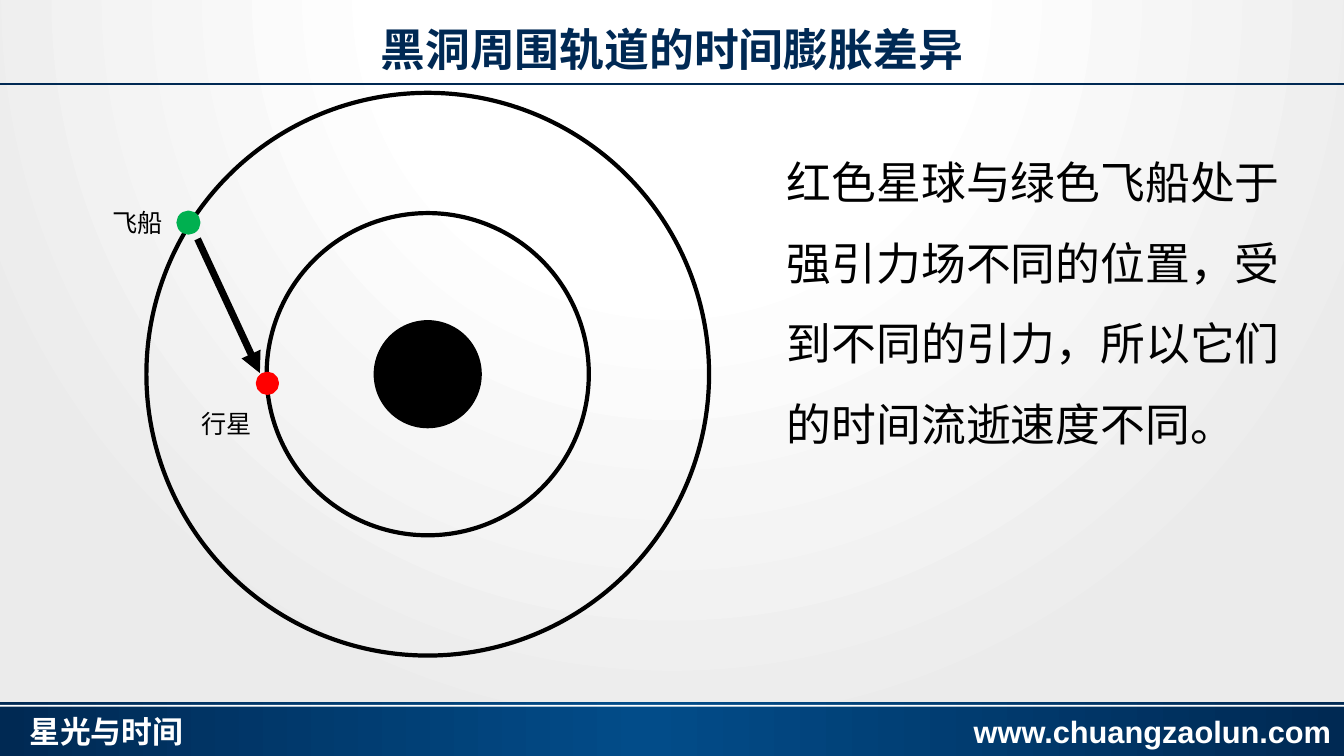
from lxml.etree import SubElement
from pptx import Presentation
from pptx.dml.color import RGBColor
from pptx.enum.shapes import MSO_CONNECTOR, MSO_SHAPE
from pptx.enum.text import MSO_ANCHOR, MSO_AUTO_SIZE, PP_ALIGN
from pptx.oxml import parse_xml
from pptx.oxml.ns import nsdecls, qn
from pptx.util import Cm, Pt

NAVY = RGBColor(0x00, 0x29, 0x53)
TITLE_NAVY = RGBColor(0x00, 0x29, 0x54)
BLUE = RGBColor(0x02, 0x4C, 0x89)
WHITE = RGBColor(0xFF, 0xFF, 0xFF)
PALE_GREY = RGBColor(0xEB, 0xEB, 0xEB)
BLACK = RGBColor(0x00, 0x00, 0x00)
RED = RGBColor(0xFF, 0x00, 0x00)
GREEN = RGBColor(0x00, 0xB0, 0x50)
CHINESE_FONT = "Noto Sans CJK SC"
SLIDE_WIDTH, SLIDE_HEIGHT = 33.87, 19.05


def gradient_fill(stops, direction):
    stop_xml = "".join(
        f'<a:gs pos="{position * 1000}"><a:srgbClr val="{color}"/></a:gs>'
        for position, color in stops
    )
    return parse_xml(
        f'<a:gradFill {nsdecls("a")} rotWithShape="1">'
        f"<a:gsLst>{stop_xml}</a:gsLst>{direction}</a:gradFill>"
    )


def format_text(shape, text, size, color, font_name, bold=False, spacing=1.0):
    text_frame = shape.text_frame
    text_frame.text = text
    paragraph = text_frame.paragraphs[0]
    paragraph.line_spacing = spacing
    run = paragraph.runs[0]
    run.font.size = Pt(size)
    run.font.bold = bold
    run.font.name = font_name
    run.font.color.rgb = color
    properties = run.font._element
    properties.set("lang", "zh-CN")
    SubElement(properties, qn("a:ea")).set("typeface", CHINESE_FONT)
    return paragraph


def add_text(slide, left, top, width, height, text, size, color, font_name, **style):
    shape = slide.shapes.add_textbox(Cm(left), Cm(top), Cm(width), Cm(height))
    format_text(shape, text, size, color, font_name, **style)
    shape.text_frame.word_wrap = True
    return shape


def add_line(slide, start, end, color, width):
    connector = slide.shapes.add_connector(
        MSO_CONNECTOR.STRAIGHT, *(Cm(value) for value in (*start, *end))
    )
    connector.line.color.rgb = color
    connector.line.width = Pt(width)
    SubElement(connector._element.spPr, qn("a:effectLst"))
    return connector


def add_bar(slide, left, top, width, height, color):
    bar = slide.shapes.add_shape(
        MSO_SHAPE.RECTANGLE, Cm(left), Cm(top), Cm(width), Cm(height)
    )
    bar.shadow.inherit = False
    bar.fill.solid()
    bar.fill.fore_color.rgb = color
    bar.line.fill.background()
    return bar


def add_circle(slide, center_x, center_y, radius, color, filled=True):
    circle = slide.shapes.add_shape(
        MSO_SHAPE.OVAL, Cm(center_x - radius), Cm(center_y - radius),
        Cm(2 * radius), Cm(2 * radius),
    )
    circle.shadow.inherit = False
    if filled:
        circle.fill.solid()
        circle.fill.fore_color.rgb = color
    else:
        circle.fill.background()
    circle.line.color.rgb = color
    circle.line.width = Pt(3)


def set_background(slide):
    fill = gradient_fill(
        [(0, WHITE), (35, WHITE), (100, PALE_GREY)],
        '<a:path path="circle">'
        '<a:fillToRect l="50000" t="-80000" r="50000" b="180000"/></a:path>',
    )
    background = parse_xml(f'<p:bg {nsdecls("p", "a")}><p:bgPr><a:effectLst/></p:bgPr></p:bg>')
    background[0].insert(0, fill)
    slide._element.cSld.insert(0, background)


def add_header(slide, left, top, width, height):
    add_line(slide, (left, top + height), (left + width, top + height), NAVY, 1.75)
    title = slide.shapes.title
    title.left, title.top = Cm(left), Cm(top)
    title.width, title.height = Cm(width), Cm(height)
    paragraph = format_text(
        title, "黑洞周围轨道的时间膨胀差异", 32, TITLE_NAVY, "Arial", bold=True, spacing=0.9
    )
    paragraph.alignment = PP_ALIGN.CENTER
    title.text_frame.vertical_anchor = MSO_ANCHOR.MIDDLE
    title.text_frame.auto_size = MSO_AUTO_SIZE.NONE


def add_footer(slide, left, top, width, height):
    band = add_bar(slide, left, top, width, height, NAVY)
    solid = band._element.spPr.find(qn("a:solidFill"))
    solid.getparent().replace(
        solid,
        gradient_fill([(0, NAVY), (48, BLUE), (100, NAVY)], '<a:lin ang="0" scaled="0"/>'),
    )
    add_bar(slide, left, top + 0.06, width, 0.05, WHITE)
    for offset, text in ((24.54, "www.chuangzaolun.com"), (0.74, "星光与时间")):
        label = add_text(
            slide, left + offset, top + 0.36, 9.2, 1.0, text, 22, WHITE, "Arial",
            bold=True, spacing=0.9,
        )
        frame = label.text_frame
        frame.margin_left = frame.margin_right = frame.margin_top = frame.margin_bottom = 0


def add_orbits(slide, left, top, size):
    center_x, center_y = left + size / 2, top + size / 2
    ship_x, ship_y = center_x - 6.03, center_y - 3.82
    planet_x, planet_y = center_x - 4.04, center_y + 0.23
    add_circle(slide, center_x, center_y, 1.31, BLACK)
    for radius in (4.06, size / 2):
        add_circle(slide, center_x, center_y, radius, BLACK, filled=False)
    add_circle(slide, planet_x, planet_y, 0.24, RED)
    add_circle(slide, ship_x, ship_y, 0.25, GREEN)
    for x, y, text in (
        (ship_x - 2.17, ship_y - 0.51, "飞船"),
        (planet_x - 1.92, planet_y + 0.5, "行星"),
    ):
        add_text(slide, x, y, 1.83, 1.02, text, 18, BLACK, "Karla")
    arrow = add_line(
        slide, (ship_x + 0.23, ship_y + 0.41), (planet_x - 0.19, planet_y - 0.26), BLACK, 5
    )
    SubElement(arrow.line._get_or_add_ln(), qn("a:tailEnd")).set("type", "triangle")


def add_explanation(slide, left, top, width, height):
    add_text(
        slide, left, top, width, height,
        "红色星球与绿色飞船处于强引力场不同的位置，受到不同的引力，所以它们的时间流逝速度不同。",
        32, BLACK, CHINESE_FONT, spacing=1.5,
    )


def main():
    presentation = Presentation()
    presentation.slide_width, presentation.slide_height = Cm(SLIDE_WIDTH), Cm(SLIDE_HEIGHT)
    slide = presentation.slides.add_slide(presentation.slide_layouts[5])
    set_background(slide)
    add_header(slide, 0, 0.5, SLIDE_WIDTH, 1.62)
    add_footer(slide, 0, 17.7, SLIDE_WIDTH, 1.4)
    add_orbits(slide, 3.69, 2.34, 14.18)
    add_explanation(slide, 19.58, 3.1, 13.0, 9.25)
    presentation.save("out.pptx")


if __name__ == "__main__":
    main()
